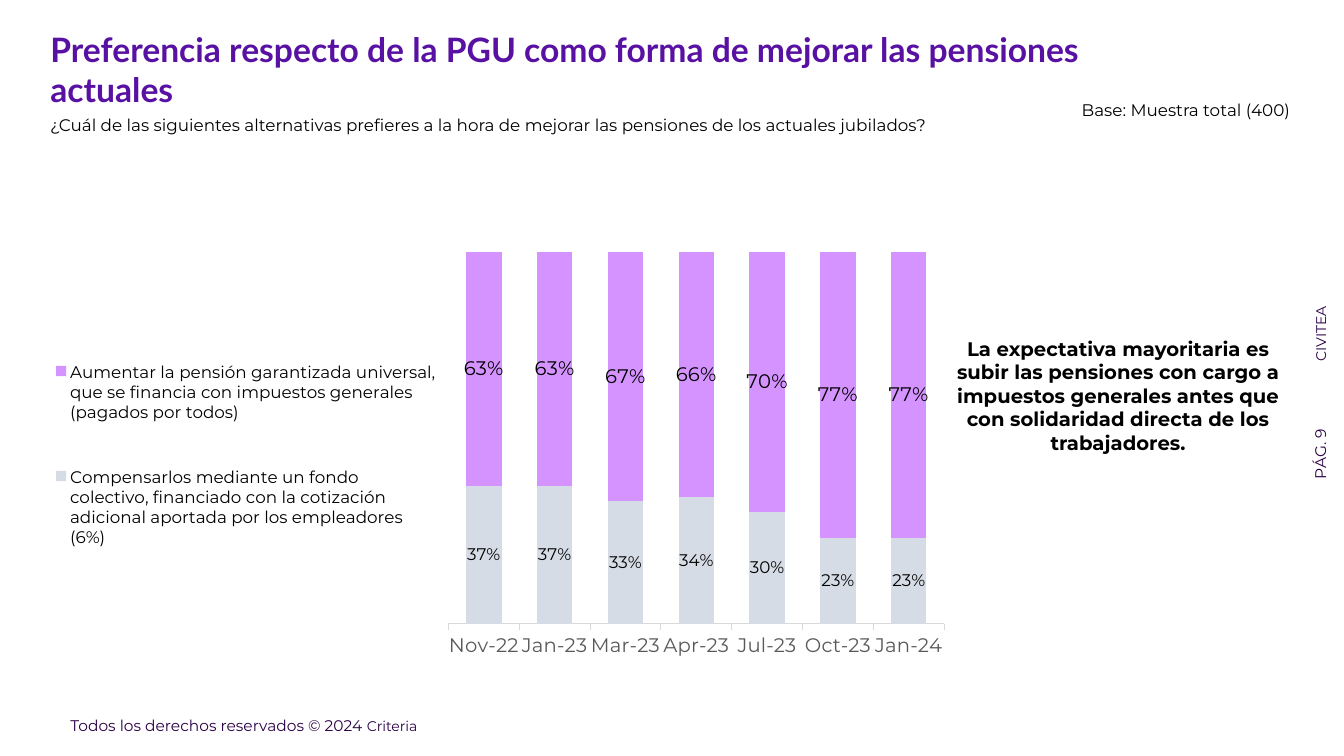
from dataclasses import dataclass

from lxml import etree
from pptx import Presentation
from pptx.chart.data import CategoryChartData
from pptx.dml.color import RGBColor
from pptx.enum.chart import (XL_CHART_TYPE, XL_LABEL_POSITION, XL_LEGEND_POSITION,
                             XL_TICK_LABEL_POSITION, XL_TICK_MARK)
from pptx.enum.text import MSO_ANCHOR, MSO_AUTO_SIZE, PP_ALIGN
from pptx.oxml.ns import qn
from pptx.util import Inches, Pt

LEFT, CENTER = PP_ALIGN.LEFT, PP_ALIGN.CENTER
OUTSIDE, NO_TICK = XL_TICK_MARK.OUTSIDE, XL_TICK_MARK.NONE


@dataclass(frozen=True)
class Theme:
    heading_font: str = "Lato"
    body_font: str = "Montserrat"
    heading: RGBColor = RGBColor(0x58, 0x11, 0xA2)
    footer: RGBColor = RGBColor(0x2C, 0x00, 0x46)
    text: RGBColor = RGBColor(0, 0, 0)
    axis_text: RGBColor = RGBColor(0x59, 0x59, 0x59)
    axis_line: RGBColor = RGBColor(0xD9, 0xD9, 0xD9)
    employers: RGBColor = RGBColor(0xD6, 0xDC, 0xE5)
    taxes: RGBColor = RGBColor(0xD5, 0x93, 0xFF)
    title_size: int = 24
    large: int = 14
    medium: int = 12
    small: int = 11
    tiny: int = 10


theme = Theme()
margin = 0.4
chart_width, chart_height = 8.97, 4.69


def style_font(font, size, color, bold=False, name=theme.body_font):
    font.name, font.size, font.bold = name, Pt(size), bold
    font.color.rgb = color


def set_layout(parent, position, target, left, top, width, height):
    """Place a chart part, in inches from the chart's corner."""
    for old in parent.findall(qn("c:layout")):
        parent.remove(old)
    layout = etree.Element(qn("c:layout"))
    manual = etree.SubElement(layout, qn("c:manualLayout"))
    values = [("xMode", "edge"), ("yMode", "edge"),
              ("x", left / chart_width), ("y", top / chart_height),
              ("w", width / chart_width), ("h", height / chart_height)]
    if target:
        values.insert(0, ("layoutTarget", target))
    for tag, value in values:
        etree.SubElement(manual, qn("c:" + tag)).set("val", str(value))
    parent.insert(position, layout)


deck = Presentation()
deck.slide_width, deck.slide_height = Inches(13.33), Inches(7.5)
page = deck.slides.add_slide(deck.slide_layouts[5])

# Title
title = page.shapes.title
title.left, title.top = Inches(margin), Inches(0.35)
title.width, title.height = Inches(10.55), Inches(0.67)
frame = title.text_frame
frame.text = "Preferencia respecto de la PGU como forma de mejorar las pensiones actuales"
frame.word_wrap, frame.auto_size = True, MSO_AUTO_SIZE.NONE
frame.vertical_anchor = MSO_ANCHOR.MIDDLE
para = frame.paragraphs[0]
para.alignment = LEFT
style_font(para.font, theme.title_size, theme.heading, True, theme.heading_font)

# Question, base, conclusion and side labels: spans, place, size, colour, bold, align, turn
notes = [
    (["¿Cuál de las siguientes alternativas prefieres a la hora de mejorar las "
      "pensiones de los actuales jubilados?"],
     (margin, 1.09, 10.03, 0.3), theme.medium, theme.text, False, LEFT, 0),
    (["Base: Muestra total (400)"],
     (10.63, 0.94, 2.45, 0.3), theme.medium, theme.text, False, LEFT, 0),
    (["La expectativa mayoritaria es subir las pensiones con cargo a impuestos "
      "generales antes que con solidaridad directa de los trabajadores."],
     (9.37, 3.29, 3.44, 1.28), theme.large, theme.text, True, CENTER, 0),
    (["CIVITEA"],
     (12.63, 3.08, 0.94, 0.27), theme.tiny, theme.footer, False, LEFT, 270),
    (["PÁG. 9"],
     (12.61, 4.36, 0.97, 0.29), theme.small, theme.footer, False, CENTER, 270),
    (["Todos los derechos reservados © 2024 ", "Criteria"],
     (0.6, 7.06, 4.03, 0.29), theme.small, theme.footer, False, LEFT, 0),
]
for spans, place, size, color, bold, align, turn in notes:
    box = page.shapes.add_textbox(*map(Inches, place))
    box.rotation = turn
    box.text_frame.word_wrap = True
    para = box.text_frame.paragraphs[0]
    para.alignment = align
    style_font(para.font, size, color, bold)
    for index, words in enumerate(spans):
        span = para.add_run()
        span.text = words
        if index:
            span.font.size = Pt(theme.tiny)

# Chart data
data = CategoryChartData(number_format="0%")
data.categories = ["Nov-22", "Jan-23", "Mar-23", "Apr-23", "Jul-23", "Oct-23", "Jan-24"]
data.add_series("Compensarlos mediante un fondo colectivo, financiado con la cotización "
                "adicional aportada por los empleadores (6%)",
                [0.37, 0.37, 0.33, 0.34, 0.30, 0.23, 0.23])
data.add_series("Aumentar la pensión garantizada universal, que se financia con impuestos "
                "generales (pagados por todos)",
                [0.63, 0.63, 0.67, 0.66, 0.70, 0.77, 0.77])
chart = page.shapes.add_chart(XL_CHART_TYPE.COLUMN_STACKED, Inches(margin), Inches(1.95),
                              Inches(chart_width), Inches(chart_height), data).chart
chart.has_title = False
style_font(chart.font, theme.large, theme.text)

# Columns and their labels
plot = chart.plots[0]
plot.gap_width, plot.overlap, plot.vary_by_categories = 100, 100, False
looks = [(theme.employers, theme.medium), (theme.taxes, theme.large)]
for series, (color, size) in zip(plot.series, looks):
    series.format.fill.solid()
    series.format.fill.fore_color.rgb = color
    labels = series.data_labels
    labels.show_value = True
    labels.number_format, labels.number_format_is_linked = "0%", False
    labels.position = XL_LABEL_POSITION.CENTER
    style_font(labels.font, size, theme.text)

# Axes
months, shares = chart.category_axis, chart.value_axis
months.major_tick_mark, months.minor_tick_mark = OUTSIDE, NO_TICK
months.tick_label_position = XL_TICK_LABEL_POSITION.LOW
months.format.line.color.rgb = theme.axis_line
months.format.line.width = Pt(0.75)
style_font(months.tick_labels.font, theme.large, theme.axis_text)
shares.minimum_scale, shares.maximum_scale = 0, 1
shares.has_major_gridlines = False
shares.visible = False

# Legend on the left, columns on the right
chart.has_legend = True
legend = chart.legend
legend.position, legend.include_in_layout = XL_LEGEND_POSITION.LEFT, False
style_font(legend.font, theme.medium, theme.text)
chart_xml = chart.element
set_layout(chart_xml.find(".//" + qn("c:legend")), 1, None, 0.13, 1.2, 3.82, 2.73)
set_layout(chart_xml.find(".//" + qn("c:plotArea")), 0, "inner", 4.05, 0.55, 4.92, 3.69)

deck.save("out.pptx")
